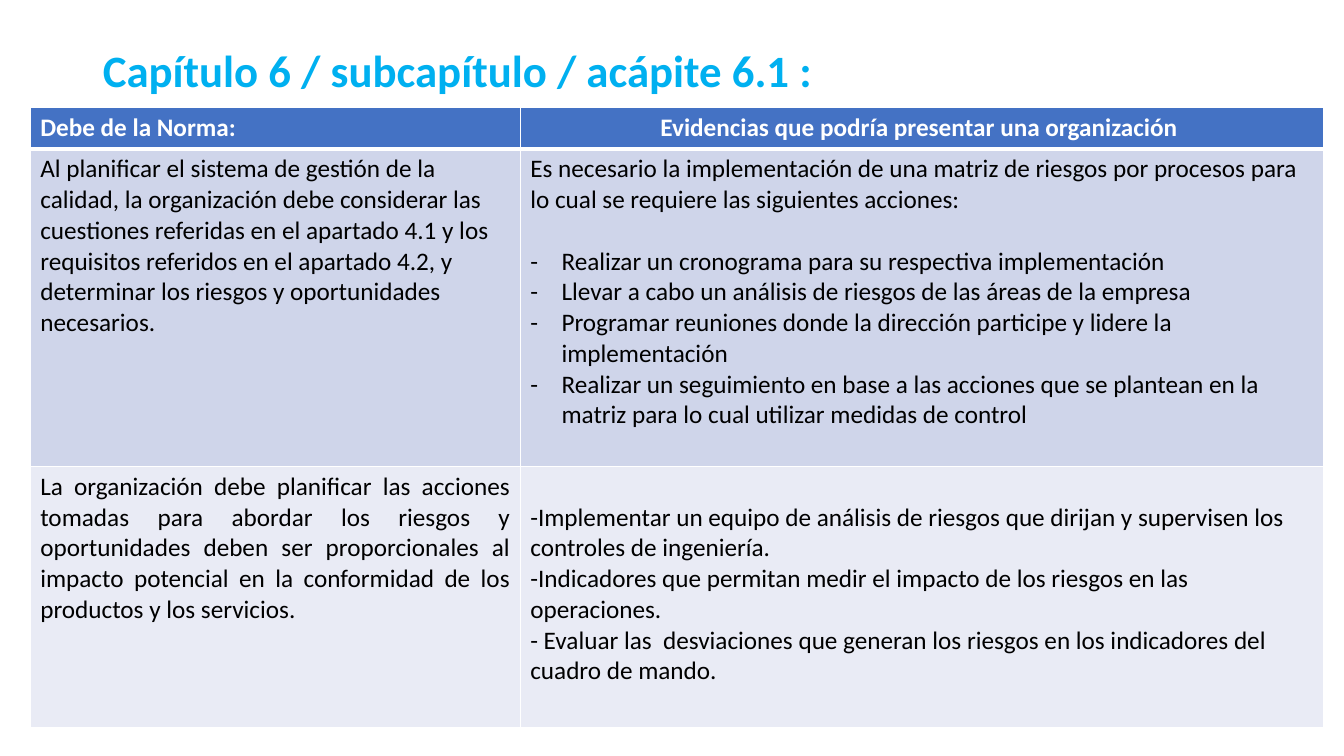
"""Builds a slide pairing the requirements of clause 6.1 with possible evidence."""
from lxml import etree
from pptx import Presentation
from pptx import util as u
from pptx.dml.color import RGBColor
from pptx.enum import text
from pptx.oxml.ns import qn

TITLE = "Capítulo 6 / subcapítulo / acápite 6.1 :"
HEADINGS = ["Debe de la Norma:", "Evidencias que podría presentar una organización "]
PLANNING = [
    "Al planificar el sistema de gestión de la calidad, la organización debe considerar las "
    "cuestiones referidas en el apartado 4.1 y los requisitos referidos en el apartado 4.2, "
    "y determinar los riesgos y oportunidades necesarios."
]
MATRIX_INTRO = (
    "Es necesario la implementación de una matriz de riesgos por procesos para lo cual se "
    "requiere las siguientes acciones:"
)
MATRIX_ACTIONS = [
    "Realizar un cronograma para su respectiva implementación",
    "Llevar a cabo un análisis de riesgos de las áreas de la empresa",
    "Programar reuniones donde la dirección participe y lidere la implementación",
    "Realizar un seguimiento en base a las acciones que se plantean en la matriz para lo cual "
    "utilizar medidas de control",
]
PROPORTION = [
    "La organización debe planificar las acciones tomadas para abordar los riesgos y "
    "oportunidades deben ser proporcionales al impacto potencial en la conformidad de los "
    "productos y los servicios."
]
CONTROLS = [
    "-Implementar un equipo de análisis de riesgos que dirijan y supervisen los controles de "
    "ingeniería.",
    "-Indicadores que permitan medir el impacto de los riesgos en las operaciones.",
    "- Evaluar las  desviaciones que generan los riesgos en los indicadores del cuadro de mando.",
]
ROWS = [
    [[heading] for heading in HEADINGS],
    [PLANNING, [MATRIX_INTRO, *MATRIX_ACTIONS]],
    [PROPORTION, CONTROLS],
]
COLUMN_WIDTHS = [4.86, 7.97]
ROW_HEIGHTS = [0.4, 3.15, 2.59]
ALIGNMENTS = {(0, 1): text.PP_ALIGN.CENTER, (2, 0): text.PP_ALIGN.JUSTIFY}

FONT = "Calibri"
BODY_SIZE = 18
LINE_GAP = u.Pt(22)
HANG = u.Inches(0.31)
SKY = RGBColor(0x00, 0xB0, 0xF0)
WHITE = RGBColor(0xFF, 0xFF, 0xFF)
BLACK = RGBColor(0, 0, 0)
ROW_FILLS = [
    RGBColor(0x44, 0x72, 0xC4),
    RGBColor(0xCF, 0xD5, 0xEA),
    RGBColor(0xE9, 0xEB, 0xF5),
]


def set_font(paragraph, size, color, bold):
    font = paragraph.font
    font.name, font.size, font.bold = FONT, u.Pt(size), bold
    font.color.rgb = color


def add_dash(paragraph):
    properties = paragraph._p.get_or_add_pPr()
    properties.set("marL", str(HANG))
    properties.set("indent", str(-HANG))
    etree.SubElement(properties, qn("a:buFont")).set("typeface", FONT)
    etree.SubElement(properties, qn("a:buChar")).set("char", "-")


def add_borders(cell, top, bottom):
    properties = cell._tc.get_or_add_tcPr()
    sides = {"lnL": 1, "lnR": 1, "lnT": top, "lnB": bottom}
    for position, (side, width) in enumerate(sides.items()):
        line = etree.Element(qn(f"a:{side}"), w=str(u.Pt(width)))
        fill = etree.SubElement(line, qn("a:solidFill"))
        etree.SubElement(fill, qn("a:srgbClr")).set("val", str(WHITE))
        properties.insert(position, line)


def fill_cell(cell, row, column, lines):
    cell.fill.solid()
    cell.fill.fore_color.rgb = ROW_FILLS[row]
    add_borders(cell, 3 if row == 1 else 1, 3 if row == 0 else 1)
    if lines is CONTROLS:
        cell.margin_top = u.Inches(0.05) + LINE_GAP
    for index, line in enumerate(lines):
        frame = cell.text_frame
        paragraph = frame.add_paragraph() if index else frame.paragraphs[0]
        paragraph.text = line
        paragraph.alignment = ALIGNMENTS.get((row, column), text.PP_ALIGN.LEFT)
        if line == MATRIX_ACTIONS[0]:
            paragraph.space_before = LINE_GAP
        if line in MATRIX_ACTIONS:
            add_dash(paragraph)
        set_font(paragraph, BODY_SIZE, BLACK if row else WHITE, row == 0)


def add_title(slide):
    title = slide.shapes.title
    title.left, title.top = u.Inches(0.92), 0
    title.width, title.height = u.Inches(11.5), u.Inches(1.45)
    title.text_frame.text = TITLE
    title.text_frame.vertical_anchor = text.MSO_ANCHOR.MIDDLE
    heading = title.text_frame.paragraphs[0]
    heading.alignment = text.PP_ALIGN.LEFT
    heading.line_spacing = 0.9
    set_font(heading, 32, SKY, True)


def add_requirements(slide):
    requirements = slide.shapes.add_table(
        len(ROWS), len(HEADINGS), u.Inches(0.3), u.Inches(1.07),
        u.Inches(sum(COLUMN_WIDTHS)), u.Inches(sum(ROW_HEIGHTS)),
    ).table
    for column, width in zip(requirements.columns, COLUMN_WIDTHS):
        column.width = u.Inches(width)
    for row, height in zip(requirements.rows, ROW_HEIGHTS):
        row.height = u.Inches(height)
    for row, entries in enumerate(ROWS):
        for column, lines in enumerate(entries):
            fill_cell(requirements.cell(row, column), row, column, lines)


def main():
    deck = Presentation()
    deck.slide_width, deck.slide_height = u.Inches(13.33), u.Inches(7.5)
    slide = deck.slides.add_slide(deck.slide_layouts[5])
    add_title(slide)
    add_requirements(slide)
    deck.save("out.pptx")


if __name__ == "__main__":
    main()
